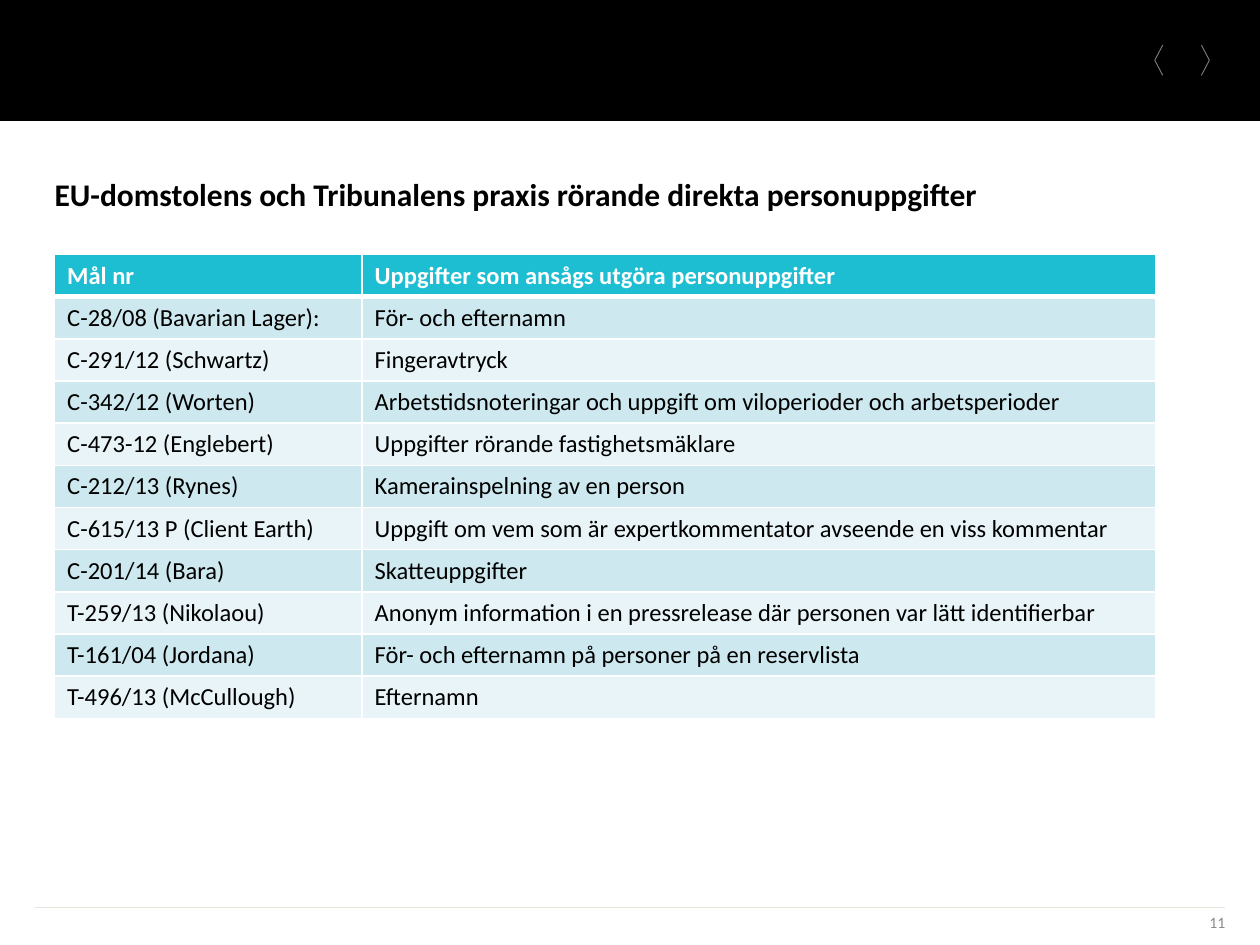
from lxml import etree
from pptx import Presentation
from pptx.dml.color import RGBColor
from pptx.enum.shapes import MSO_CONNECTOR as Connector, MSO_SHAPE as Shape
from pptx.enum.text import MSO_ANCHOR as Anchor, PP_ALIGN as Align
from pptx.oxml.ns import qn
from pptx.util import Cm, Pt

BLACK = RGBColor(0x00, 0x00, 0x00)
WHITE = RGBColor(0xFF, 0xFF, 0xFF)
TURQUOISE = RGBColor(0x1E, 0xBE, 0xD2)
BAND_DARK = RGBColor(0xCD, 0xE8, 0xEE)
BAND_LIGHT = RGBColor(0xE8, 0xF4, 0xF7)
ARROW_GREY = RGBColor(0x80, 0x80, 0x80)
RULE_GREY = RGBColor(0xE9, 0xE4, 0xDB)
NUMBER_GREY = RGBColor(0x8C, 0x8C, 0x8C)

CASES = [
    ("Mål nr", "Uppgifter som ansågs utgöra personuppgifter"),
    ("C-28/08 (Bavarian Lager):", "För- och efternamn"),
    ("C-291/12 (Schwartz)", "Fingeravtryck"),
    ("C-342/12 (Worten)", "Arbetstidsnoteringar och uppgift om viloperioder och arbetsperioder"),
    ("C-473-12 (Englebert)", "Uppgifter rörande fastighetsmäklare"),
    ("C-212/13 (Rynes)", "Kamerainspelning av en person"),
    ("C-615/13 P (Client Earth)", "Uppgift om vem som är expertkommentator avseende en viss kommentar"),
    ("C-201/14 (Bara)", "Skatteuppgifter"),
    ("T-259/13 (Nikolaou)", "Anonym information i en pressrelease där personen var lätt identifierbar"),
    ("T-161/04 (Jordana)", "För- och efternamn på personer på en reservlista"),
    ("T-496/13 (McCullough)", "Efternamn"),
]


class SlideBuilder:
    font_name = "Calibri"

    def __init__(self, slide):
        self.slide = slide
        self.shapes = slide.shapes

    def fill_text(self, frame, text, size, color, bold=False, align=Align.LEFT):
        paragraph = frame.paragraphs[0]
        paragraph.alignment = align
        run = paragraph.add_run()
        run.text = text
        run.font.color.rgb = color
        for name, value in {"name": self.font_name, "size": Pt(size), "bold": bold}.items():
            setattr(run.font, name, value)

    def band(self, left, top, width, height, color):
        band = self.shapes.add_shape(Shape.RECTANGLE, Cm(left), Cm(top), Cm(width), Cm(height))
        band.shadow.inherit = False
        band.fill.solid()
        band.fill.fore_color.rgb = color
        band.line.fill.background()

    def chevron(self, back, tip, top, height):
        builder = self.shapes.build_freeform(Cm(back), Cm(top))
        builder.add_line_segments(
            [(Cm(tip), Cm(top + height / 2)), (Cm(back), Cm(top + height))], close=False)
        chevron = builder.convert_to_shape()
        chevron.shadow.inherit = False
        chevron.fill.background()
        chevron.line.color.rgb = ARROW_GREY
        chevron.line.width = Pt(0.5)

    def rule(self, left, right, y):
        rule = self.shapes.add_connector(Connector.STRAIGHT, Cm(left), Cm(y), Cm(right), Cm(y))
        rule.line.color.rgb = RULE_GREY
        rule.line.width = Pt(0.25)
        etree.SubElement(rule.element.spPr, qn("a:effectLst"))

    def text(self, left, top, width, height, text, size, color, anchor=Anchor.TOP, **style):
        frame = self.shapes.add_textbox(Cm(left), Cm(top), Cm(width), Cm(height)).text_frame
        layout = {"word_wrap": True, "vertical_anchor": anchor, "margin_left": 0,
                  "margin_right": 0, "margin_top": 0, "margin_bottom": 0}
        for name, value in layout.items():
            setattr(frame, name, value)
        self.fill_text(frame, text, size, color, **style)

    def border(self, cell, bottom):
        # Borders must come before the fill in the cell properties
        widths = {"a:lnL": 1, "a:lnR": 1, "a:lnT": 1, "a:lnB": bottom}
        for position, (tag, width) in enumerate(widths.items()):
            line = etree.Element(qn(tag), w=str(Pt(width)))
            fill = etree.SubElement(line, qn("a:solidFill"))
            etree.SubElement(fill, qn("a:srgbClr"), val=str(WHITE))
            cell._tc.get_or_add_tcPr().insert(position, line)

    def table(self, left, top, column_widths, row_height, rows):
        table = self.shapes.add_table(
            len(rows), len(column_widths), Cm(left), Cm(top),
            Cm(sum(column_widths)), Cm(row_height * len(rows))).table
        for column, width in zip(table.columns, column_widths):
            column.width = Cm(width)
        for r, row in enumerate(rows):
            header = r == 0
            fill = TURQUOISE if header else (BAND_LIGHT, BAND_DARK)[r % 2]
            for c, text in enumerate(row):
                cell = table.cell(r, c)
                cell.fill.solid()
                cell.fill.fore_color.rgb = fill
                self.border(cell, bottom=3 if header else 1)
                self.fill_text(cell.text_frame, text, 14, WHITE if header else BLACK, bold=header)


def main():
    deck = Presentation()
    deck.slide_width, deck.slide_height = Cm(25.4), Cm(19.05)
    page = SlideBuilder(deck.slides.add_slide(deck.slide_layouts[6]))

    # Top band with navigation arrows
    page.band(0, 0, 25.4, 2.44, BLACK)
    for back, tip in ((24.22, 24.38), (23.44, 23.28)):
        page.chevron(back, tip, 0.91, 0.61)

    # Heading and case table
    page.text(1.1, 3.53, 23.8, 1.2,
              "EU-domstolens och Tribunalens praxis rörande direkta personuppgifter",
              18, BLACK, bold=True)
    page.table(1.1, 5.13, (6.2, 16), 0.85, CASES)

    # Footer
    page.rule(0.7, 24.7, 18.29)
    page.text(18.2, 18.29, 6.5, 0.6, "11", 9, NUMBER_GREY, anchor=Anchor.MIDDLE, align=Align.RIGHT)

    deck.save("out.pptx")


if __name__ == "__main__":
    main()
